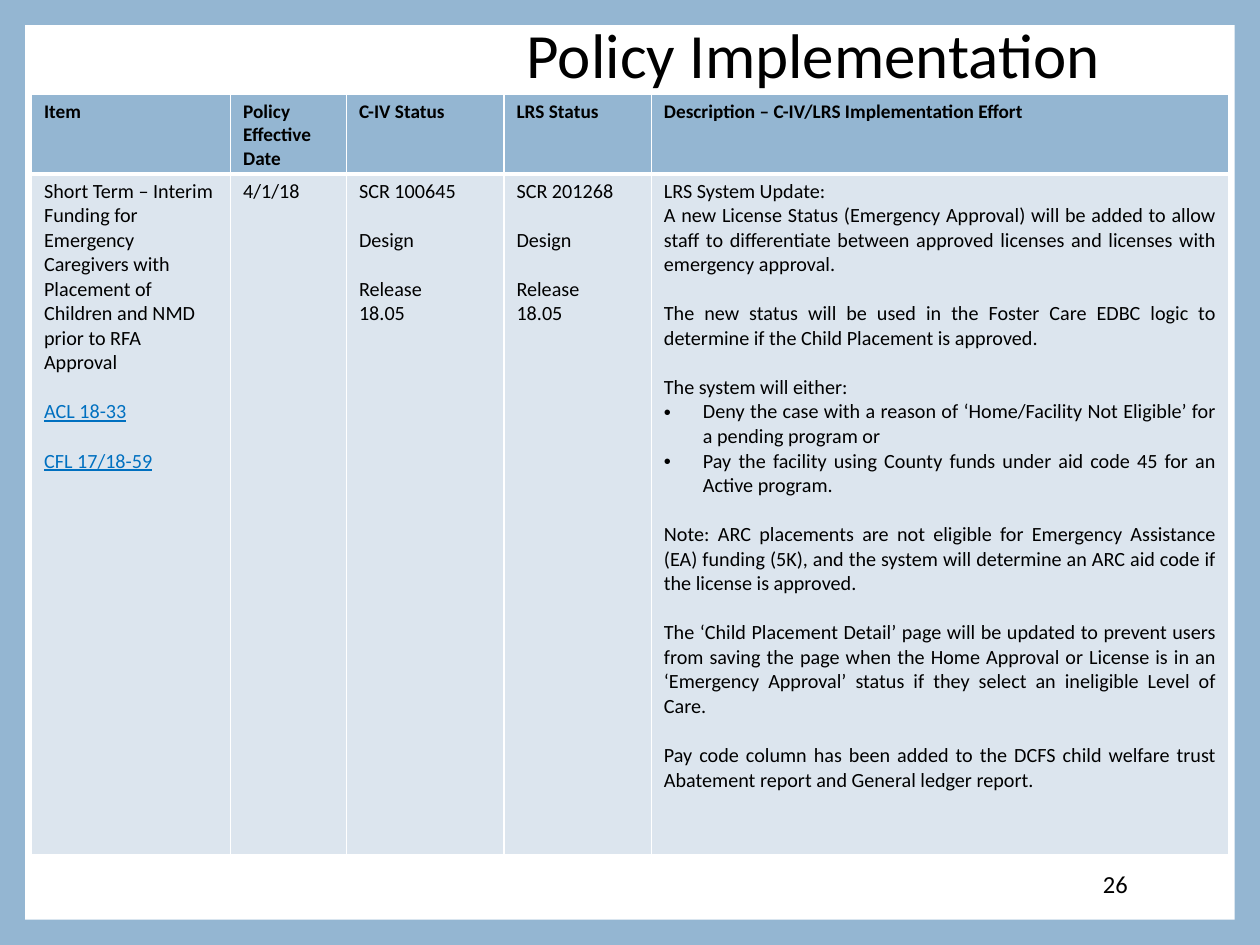
from dataclasses import dataclass

from lxml import etree
from pptx import Presentation
from pptx.dml.color import RGBColor
from pptx.enum.shapes import MSO_SHAPE
from pptx.enum.text import MSO_ANCHOR, PP_ALIGN
from pptx.oxml.ns import qn
from pptx.util import Inches, Pt

RECT = MSO_SHAPE.RECTANGLE
MIDDLE = MSO_ANCHOR.MIDDLE
LEFT, RIGHT, JUSTIFY = PP_ALIGN.LEFT, PP_ALIGN.RIGHT, PP_ALIGN.JUSTIFY


@dataclass(frozen=True)
class Theme:
    font: str = "Calibri"
    blue: str = "94B6D2"
    pale: str = "DCE5EE"
    white: str = "FFFFFF"
    black: str = "000000"
    link: str = "0070C0"
    title: float = 36
    number: float = 14
    head: float = 11
    body: float = 11.5
    gap: float = 14


@dataclass(frozen=True)
class Para:
    text: str
    gap: bool = False
    link: bool = False
    bullet: bool = False
    align: PP_ALIGN = LEFT


T = Theme()
COLUMNS = [1.58, 0.92, 1.25, 1.17, 4.58]
ROWS = [0.6, 5.4]
HEADERS = ["Item", "Policy Effective Date", "C-IV Status", "LRS Status",
           "Description – C-IV/LRS Implementation Effort"]


def status(request):
    return [Para(request), Para("Design", gap=True),
            Para("Release", gap=True), Para("18.05")]


def detail(text, gap=True, bullet=False):
    return Para(text, gap=gap, bullet=bullet, align=JUSTIFY)


BODY = [
    [Para("Short Term – Interim Funding for Emergency Caregivers with "
          "Placement of Children and NMD prior to RFA Approval"),
     Para("ACL 18-33", gap=True, link=True),
     Para("CFL 17/18-59", gap=True, link=True)],
    [Para("4/1/18")],
    status("SCR 100645"),
    status("SCR 201268"),
    [Para("LRS System Update:"),
     detail("A new License Status (Emergency Approval) will be added to allow "
            "staff to differentiate between approved licenses and licenses "
            "with emergency approval.", gap=False),
     detail("The new status will be used in the Foster Care EDBC logic to "
            "determine if the Child Placement is approved."),
     detail("The system will either:"),
     detail("Deny the case with a reason of ‘Home/Facility Not Eligible’ for "
            "a pending program or", gap=False, bullet=True),
     detail("Pay the facility using County funds under aid code 45 for an "
            "Active program.", gap=False, bullet=True),
     detail("Note: ARC placements are not eligible for Emergency Assistance "
            "(EA) funding (5K), and the system will determine an ARC aid code "
            "if the license is approved."),
     detail("The ‘Child Placement Detail’ page will be updated to prevent "
            "users from saving the page when the Home Approval or License is "
            "in an ‘Emergency Approval’ status if they select an ineligible "
            "Level of Care."),
     detail("Pay code column has been added to the DCFS child welfare trust "
            "Abatement report and General ledger report.")],
]


def rgb(color):
    return RGBColor.from_string(color)


def inches(box):
    return [Inches(v) for v in box]


def add_run(p, text, size, color=T.black, bold=False, underline=False):
    r = p.add_run()
    r.text = text
    f = r.font
    f.name, f.size, f.bold, f.underline = T.font, Pt(size), bold, underline
    f.color.rgb = rgb(color)


def add_label(s, box, text, size, spacing=1.0):
    tf = s.shapes.add_textbox(*inches(box)).text_frame
    tf.word_wrap = True
    tf.vertical_anchor = MIDDLE
    p = tf.paragraphs[0]
    p.alignment = RIGHT
    p.line_spacing = spacing
    add_run(p, text, size)


def add_background(s, box):
    fill = s.background.fill
    fill.solid()
    fill.fore_color.rgb = rgb(T.blue)
    sp = s.shapes.add_shape(RECT, *inches(box))
    sp.shadow.inherit = False
    sp.fill.solid()
    sp.fill.fore_color.rgb = rgb(T.white)
    sp.line.fill.background()


def add_bullet(p):
    pPr = p._p.get_or_add_pPr()
    pPr.set("marL", str(Inches(0.31)))
    pPr.set("indent", str(Inches(-0.31)))
    etree.SubElement(pPr, qn("a:buFont"), typeface="Arial")
    etree.SubElement(pPr, qn("a:buChar"), char="•")


def style_cell(cell, color, bottom):
    tcPr = cell._tc.get_or_add_tcPr()
    for side, width in zip("LRTB", (1, 1, 1, bottom)):
        ln = etree.SubElement(tcPr, qn("a:ln" + side), w=str(Pt(width)))
        fill = etree.SubElement(ln, qn("a:solidFill"))
        etree.SubElement(fill, qn("a:srgbClr"), val=T.white)
    cell.fill.solid()
    cell.fill.fore_color.rgb = rgb(color)
    cell.margin_left = cell.margin_right = Inches(0.1)
    cell.margin_top = cell.margin_bottom = Inches(0.04)


def fill_cell(cell, paras, size, bold=False):
    tf = cell.text_frame
    for i, para in enumerate(paras):
        p = tf.add_paragraph() if i else tf.paragraphs[0]
        p.alignment = para.align
        if para.gap:
            p.space_before = Pt(T.gap)
        if para.bullet:
            add_bullet(p)
        color = T.link if para.link else T.black
        add_run(p, para.text, size, color, bold, para.link)


def add_policy_table(s, box):
    table = s.shapes.add_table(len(ROWS), len(COLUMNS), *inches(box)).table
    table.first_row = table.horz_banding = False
    for row, height in zip(table.rows, ROWS):
        row.height = Inches(height)
    for i, width in enumerate(COLUMNS):
        table.columns[i].width = Inches(width)
        head, body = table.cell(0, i), table.cell(1, i)
        style_cell(head, T.blue, bottom=3)
        fill_cell(head, [Para(HEADERS[i])], T.head, bold=True)
        style_cell(body, T.pale, bottom=1)
        body._tc.tcPr.find(qn("a:lnT")).set("w", str(Pt(3)))
        fill_cell(body, BODY[i], T.body)


def main():
    prs = Presentation()
    prs.slide_width, prs.slide_height = Inches(10), Inches(7.5)
    s = prs.slides.add_slide(prs.slide_layouts[6])
    add_background(s, (0.2, 0.2, 9.6, 7.1))
    add_label(s, (0.5, 0.17, 8.33, 0.58), "Policy Implementation", T.title, 0.9)
    add_label(s, (7.65, 6.81, 1.4, 0.4), "26", T.number)
    add_policy_table(s, (0.25, 0.75, 9.5, 6))
    prs.save("out.pptx")


if __name__ == "__main__":
    main()
